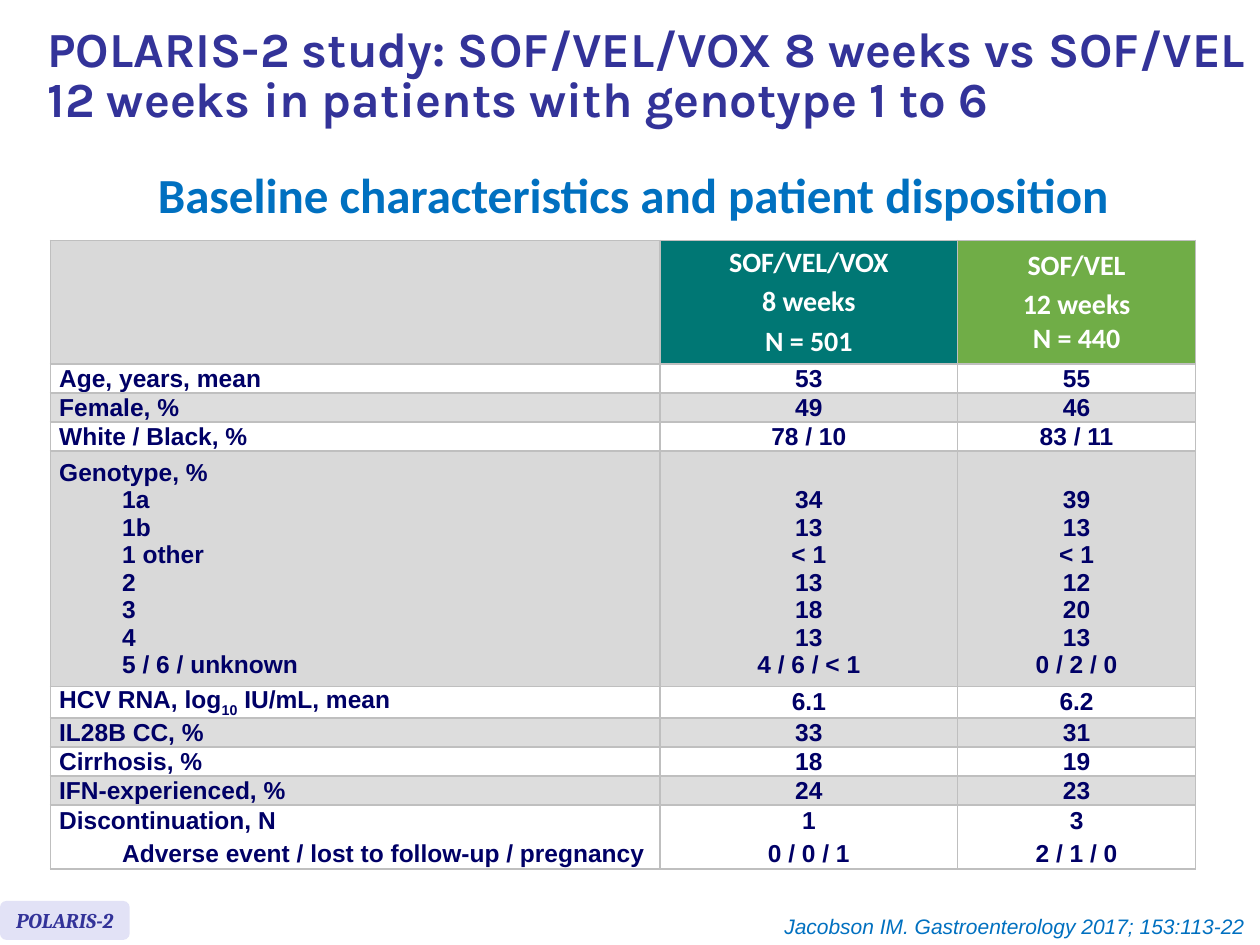
from lxml import etree
from pptx import Presentation
from pptx.dml.color import RGBColor
from pptx.enum.shapes import MSO_SHAPE
from pptx.enum.text import MSO_ANCHOR, PP_ALIGN
from pptx.oxml.ns import qn
from pptx.util import Inches, Pt

LEFT, CENTER, RIGHT = PP_ALIGN.LEFT, PP_ALIGN.CENTER, PP_ALIGN.RIGHT
MIDDLE, TOP, BOTTOM = MSO_ANCHOR.MIDDLE, MSO_ANCHOR.TOP, MSO_ANCHOR.BOTTOM

TITLE = "POLARIS-2 study: SOF/VEL/VOX 8 weeks vs SOF/VEL 12 weeks in patients with genotype 1 to 6"
SUBTITLE = "Baseline characteristics and patient disposition"
STUDY = "POLARIS-2"
CITATION = "Jacobson IM. Gastroenterology 2017; 153:113-22"

ROWS = [
    ("", "SOF/VEL/VOX\n8 weeks\nN = 501", "SOF/VEL\n12 weeks\vN = 440"),
    ("Age, years, mean", "53", "55"),
    ("Female, %", "49", "46"),
    ("White / Black, %", "78 / 10", "83 / 11"),
    ("Genotype, %\n1a\n1b\n1 other\n2\n3\n4\n5 / 6 / unknown",
     "34\n13\n< 1\n13\n18\n13\n4 / 6 / < 1",
     "39\n13\n< 1\n12\n20\n13\n0 / 2 / 0"),
    ("HCV RNA, log|10| IU/mL, mean", "6.1", "6.2"),
    ("IL28B CC, %", "33", "31"),
    ("Cirrhosis, %", "18", "19"),
    ("IFN-experienced, %", "24", "23"),
    ("Discontinuation, N\nAdverse event / lost to follow-up / pregnancy",
     "1\n0 / 0 / 1", "3\n2 / 1 / 0"),
]
GENOTYPE = 4
COL_WIDTHS = [4.84, 2.36, 1.89]
ROW_HEIGHTS = {0: 0.98, GENOTYPE: 1.87, 9: 0.51}
LINE_ROW = 0.23
HEADER_FILLS = ["D9D9D9", "007774", "70AD47"]


def rgb(value):
    return RGBColor.from_string(value)


def style(p, size, name, color, align, bold=False, italic=False):
    p.alignment = align
    for r in p.runs:
        f = r.font
        f.size, f.name, f.bold, f.italic = Pt(size), name, bold, italic
        f.color.rgb = rgb(color)


def add_text(s, box, text, look, anchor=TOP, wrap=True):
    sp = s.shapes.add_textbox(*map(Inches, box))
    tf = sp.text_frame
    tf.word_wrap, tf.vertical_anchor = wrap, anchor
    tf.text = text
    style(tf.paragraphs[0], **look)
    return tf.paragraphs[0]


def add_borders(cell):
    tc_pr = cell._tc.get_or_add_tcPr()
    for side in ("a:lnL", "a:lnR", "a:lnT", "a:lnB"):
        ln = etree.SubElement(tc_pr, qn(side), w=str(Pt(1)))
        fill = etree.SubElement(ln, qn("a:solidFill"))
        etree.SubElement(fill, qn("a:srgbClr"), val="BFBFBF")


def add_subscript(p):
    before, low, after = p.text.split("|")
    p.text = before
    for text in (low, after):
        p.add_run().text = text
    p.runs[1].font._element.set("baseline", "-25000")


def fill_cell(cell, text, row, col):
    header = row == 0
    add_borders(cell)
    cell.fill.solid()
    if header:
        fill = HEADER_FILLS[col]
    elif row == GENOTYPE:
        fill = "D9D9D9"
    else:
        fill = "FFFFFF" if row % 2 else "DDDDDD"
    cell.fill.fore_color.rgb = rgb(fill)
    cell.margin_left = cell.margin_right = Inches(0.1 if header else 0.07)
    cell.margin_top = cell.margin_bottom = 0
    cell.vertical_anchor = MIDDLE
    if row == GENOTYPE:
        cell.vertical_anchor = BOTTOM
        cell.margin_bottom = Inches(0.06)
    tf = cell.text_frame
    tf.text = text
    for i, p in enumerate(tf.paragraphs):
        if "|" in p.text:
            add_subscript(p)
        if i and row != GENOTYPE:
            p.space_before = Pt(3)
        if i and col == 0:
            p.level = 1
            p_pr = p._p.get_or_add_pPr()
            p_pr.set("marL", str(Inches(0.5)))
            p_pr.set("indent", "0")
        if header:
            style(p, 16, "Calibri", "FFFFFF", CENTER, bold=True)
        else:
            style(p, 14, "Arial", "000066", CENTER if col else LEFT, bold=True)


def add_characteristics(s):
    heights = [ROW_HEIGHTS.get(i, LINE_ROW) for i in range(len(ROWS))]
    box = (0.4, 1.91, sum(COL_WIDTHS), sum(heights))
    table = s.shapes.add_table(len(ROWS), len(COL_WIDTHS), *map(Inches, box)).table
    table.horz_banding = table.first_row = False
    for column, width in zip(table.columns, COL_WIDTHS):
        column.width = Inches(width)
    for i, (row, height) in enumerate(zip(ROWS, heights)):
        table.rows[i].height = Inches(height)
        for j, text in enumerate(row):
            fill_cell(table.cell(i, j), text, i, j)


def add_study_tag(s):
    sp = s.shapes.add_shape(MSO_SHAPE.ROUNDED_RECTANGLE,
                            *map(Inches, (0, 7.15, 1.03, 0.31)))
    sp.shadow.inherit = False
    sp.fill.solid()
    sp.fill.fore_color.rgb = rgb("E2E2F6")
    sp.line.fill.background()
    tf = sp.text_frame
    tf.word_wrap, tf.vertical_anchor = False, MIDDLE
    tf.text = STUDY
    style(tf.paragraphs[0], 12, "Cambria", "333399", CENTER, bold=True, italic=True)


def main():
    prs = Presentation()
    prs.slide_width, prs.slide_height = Inches(10), Inches(7.5)
    s = prs.slides.add_slide(prs.slide_layouts[6])
    add_characteristics(s)
    add_text(s, (0.08, 1.26, 9.89, 0.57), SUBTITLE,
             dict(size=28, name="Calibri", color="0070C0", align=CENTER, bold=True))
    add_study_tag(s)
    title = add_text(s, (0.28, 0.08, 9.84, 1.07), TITLE,
                     dict(size=28, name="Karla", color="333399", align=LEFT, bold=True),
                     anchor=MIDDLE)
    title.line_spacing = 0.85
    add_text(s, (6.04, 7.2, 3.94, 0.3), CITATION,
             dict(size=12, name="Arial", color="0070C0", align=RIGHT, italic=True),
             wrap=False)
    prs.save("out.pptx")


if __name__ == "__main__":
    main()
